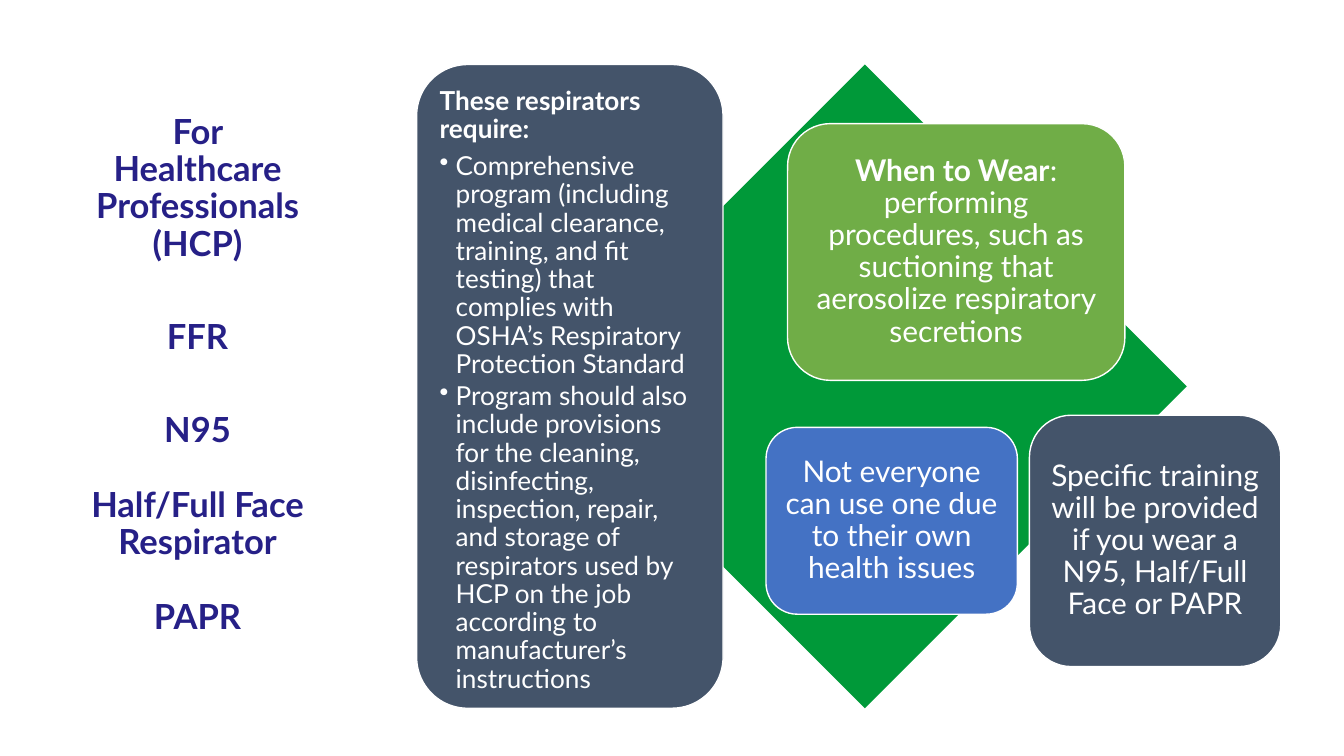
from pptx import Presentation
from pptx.dml.color import RGBColor
from pptx.enum.shapes import MSO_SHAPE
from pptx.enum.text import MSO_ANCHOR, MSO_AUTO_SIZE, PP_ALIGN
from pptx.oxml.ns import qn
from pptx.util import Inches, Pt

ROUND, DIAMOND = MSO_SHAPE.ROUNDED_RECTANGLE, MSO_SHAPE.DIAMOND
TOP, MIDDLE = MSO_ANCHOR.TOP, MSO_ANCHOR.MIDDLE
LEFT, CENTER = PP_ALIGN.LEFT, PP_ALIGN.CENTER
NAVY = RGBColor(0x26, 0x20, 0x87)
GREEN = RGBColor(0x00, 0x99, 0x39)
LIME = RGBColor(0x70, 0xAD, 0x47)
SLATE = RGBColor(0x44, 0x54, 0x6A)
BLUE = RGBColor(0x44, 0x72, 0xC4)
WHITE = RGBColor(0xFF, 0xFF, 0xFF)
FACE = "Lato"
WIDE = 10
HIGH = WIDE * 9 / 16
EDGE = 0.48     # shared top of list, panel and diamond
SIDE = 4.79     # diamond side and panel height
INDENT = 0.12

# Content: list lines with the space after each
KINDS = [
    ("For Healthcare Professionals (HCP)", 30),
    ("FFR", 30),
    ("N95", 20),
    ("Half/Full Face Respirator", 20),
    ("PAPR", 30),
]
# Paragraphs: (bulleted, [(text, bold), ...])
NEEDS = [
    (False, [("These respirators require:", True)]),
    (True, [("Comprehensive program (including medical clearance, training, "
             "and fit testing) that complies with OSHA’s Respiratory "
             "Protection Standard", False)]),
    (True, [("Program should also include provisions for the cleaning, "
             "disinfecting, inspection, repair, and storage of respirators "
             "used by HCP on the job according to manufacturer’s "
             "instructions", False)]),
]
WEAR = [(False, [("When to Wear", True),
                 (": performing procedures, such as suctioning that "
                  "aerosolize respiratory secretions", False)])]
LIMITS = [(False, [("Not everyone can use one due to their own health issues",
                    False)])]
TRAIN = [(False, [("Specific training will be provided if you wear a N95, "
                   "Half/Full Face or PAPR", False)])]
# Cards: box, fill, paragraphs, size, inset, anchor, alignment
CARDS = [
    ((5.86, 0.92, 2.51, 1.91), LIME, WEAR, 16, 0.07, MIDDLE, CENTER),
    ((3.1, EDGE, 2.28, SIDE), SLATE, NEEDS, 14, 0.06, TOP, LEFT),
    ((5.7, 3.18, 1.87, 1.39), BLUE, LIMITS, 16, 0.07, MIDDLE, CENTER),
    ((7.66, 3.09, 1.87, 1.87), SLATE, TRAIN, 16, 0.07, MIDDLE, CENTER),
]


def add_para(frame, first, runs, size, color, align, after, mark=False):
    para = frame.paragraphs[0] if first else frame.add_paragraph()
    para.alignment = align
    para.line_spacing = 0.9
    para.space_before = Pt(0)
    para.space_after = Pt(after)
    props = para._p.get_or_add_pPr()
    props.set("marL", str(Inches(INDENT if mark else 0)))
    props.set("indent", str(Inches(-INDENT if mark else 0)))
    if mark:
        item = props.makeelement(qn("a:buChar"), {"char": "•"})
    else:
        item = props.makeelement(qn("a:buNone"), {})
    props.append(item)
    para.font.size = Pt(size)
    for text, bold in runs:
        run = para.add_run()
        run.text = text
        run.font.name = FACE
        run.font.size = Pt(size)
        run.font.bold = bold
        run.font.color.rgb = color


def add_block(slide, kind, box, fill):
    shape = slide.shapes.add_shape(kind, *[Inches(n) for n in box])
    shape.shadow.inherit = False
    shape.fill.solid()
    shape.fill.fore_color.rgb = fill
    return shape


def main():
    deck = Presentation()
    deck.slide_width, deck.slide_height = Inches(WIDE), Inches(HIGH)
    slide = deck.slides.add_slide(deck.slide_layouts[1])
    title = slide.shapes.title
    title._element.getparent().remove(title._element)

    # Respirator list
    body = slide.placeholders[1]
    body.left, body.top = Inches(0.56), Inches(EDGE)
    body.width, body.height = Inches(1.82), Inches(4.63)
    frame = body.text_frame
    frame.auto_size = MSO_AUTO_SIZE.NONE
    frame.word_wrap = True
    frame.vertical_anchor = MIDDLE
    for i, (text, after) in enumerate(KINDS):
        add_para(frame, i == 0, [(text, True)], 18.5, NAVY, CENTER, after)

    # Diamond behind the cards
    gem = add_block(slide, DIAMOND, (4.04, EDGE, SIDE, SIDE), GREEN)
    gem.line.fill.background()

    # Cards
    for box, fill, paras, size, inset, anchor, align in CARDS:
        card = add_block(slide, ROUND, box, fill)
        card.line.color.rgb = WHITE
        card.line.width = Pt(0.75)
        frame = card.text_frame
        frame.word_wrap = True
        frame.vertical_anchor = anchor
        frame.margin_left = frame.margin_right = Inches(inset)
        frame.margin_top = frame.margin_bottom = Inches(inset)
        for i, (mark, runs) in enumerate(paras):
            after = size * (0.15 if mark else 0.35)
            add_para(frame, i == 0, runs, size, WHITE, align, after, mark)

    deck.save("out.pptx")


if __name__ == "__main__":
    main()
